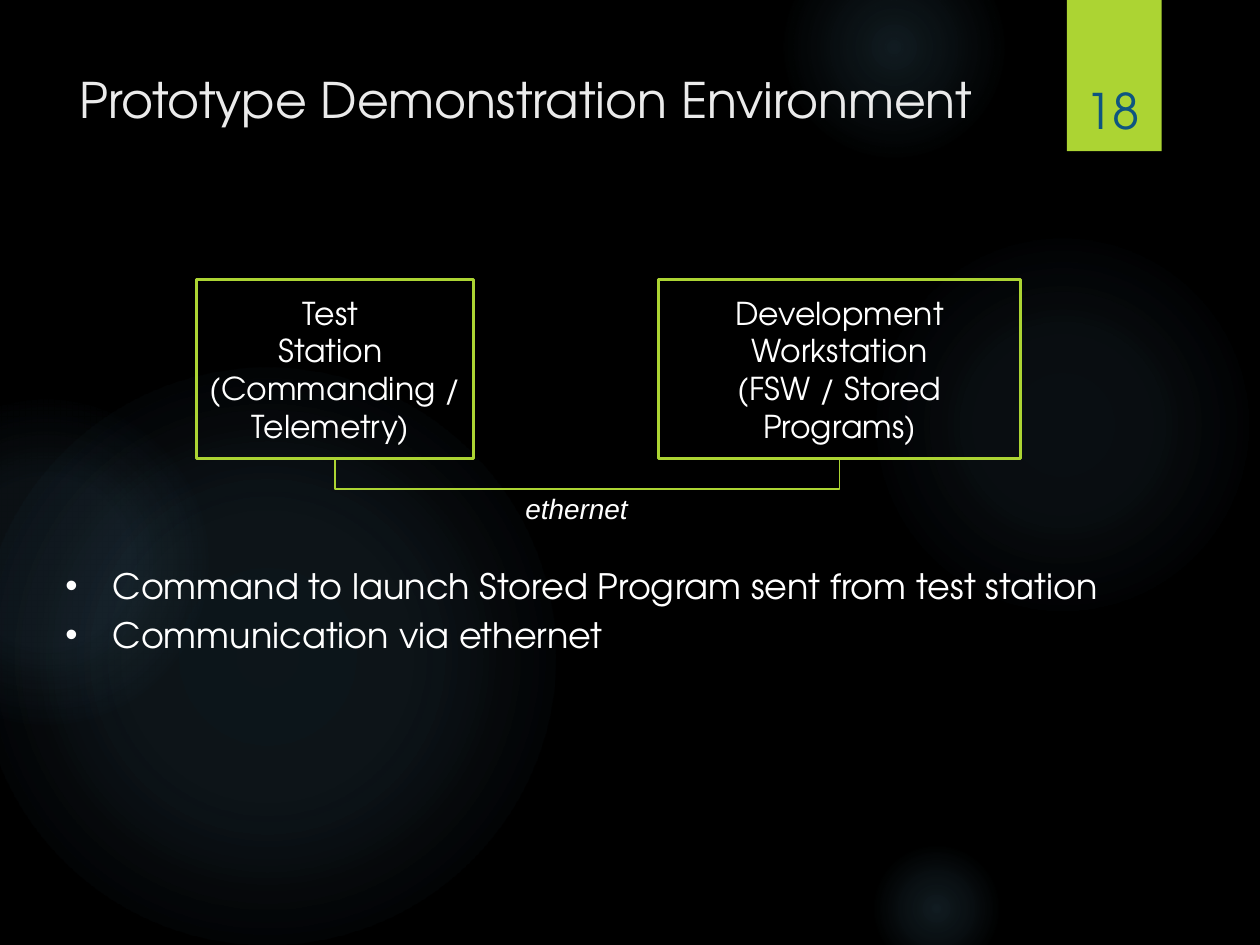
import pptx
import pptx.dml.color
import pptx.enum.shapes
import pptx.enum.text
import pptx.oxml
import pptx.oxml.ns
import pptx.util
from lxml import etree

Cm = pptx.util.Cm
Pt = pptx.util.Pt
SHAPE = pptx.enum.shapes.MSO_SHAPE
ALIGN = pptx.enum.text.PP_ALIGN
ANCHOR = pptx.enum.text.MSO_ANCHOR
qn = pptx.oxml.ns.qn
NAMESPACE = pptx.oxml.ns.nsdecls("a")


def color(hex_string):
    return pptx.dml.color.RGBColor.from_string(hex_string)


def write_text(frame, text, size=18, font="TeX Gyre Adventor", fill="FFFFFF",
               italic=False, align=ALIGN.LEFT, anchor=ANCHOR.TOP, bullet=None):
    """Write one paragraph for each line of text."""
    frame.word_wrap = True
    frame.vertical_anchor = anchor
    for index, line in enumerate(text.split("\n")):
        paragraph = frame.add_paragraph() if index else frame.paragraphs[0]
        paragraph.alignment = align
        run = paragraph.add_run()
        run.text = line
        run.font.size = Pt(size)
        run.font.name = font
        run.font.italic = italic
        run.font.color.rgb = color(fill)
        if bullet:
            paragraph.space_before = Pt(size * 0.2)
            properties = paragraph._p.get_or_add_pPr()
            indent = Cm(0.95)
            properties.set("marL", str(indent))
            properties.set("indent", str(-indent))
            etree.SubElement(properties, qn("a:buFont"), typeface="Arial")
            etree.SubElement(properties, qn("a:buChar"), char=bullet)


class SlideBuilder:
    accent = "ACD433"
    glow_color = "7AC4F0"

    def __init__(self, slide):
        self.slide = slide
        slide.background.fill.solid()
        slide.background.fill.fore_color.rgb = color("000000")

    def shape(self, kind, left, top, width, height):
        shape = self.slide.shapes.add_shape(kind, Cm(left), Cm(top), Cm(width), Cm(height))
        shape.shadow.inherit = False
        shape.fill.background()
        shape.line.fill.background()
        return shape

    def glow(self, left, top, diameter, stops):
        """Circle that fades outwards; stops are (position %, opacity %)."""
        circle = self.shape(SHAPE.OVAL, left, top, diameter, diameter)
        stop_xml = "".join(
            f'<a:gs pos="{position * 1000}"><a:srgbClr val="{self.glow_color}">'
            f'<a:alpha val="{opacity * 1000}"/></a:srgbClr></a:gs>'
            for position, opacity in stops)
        gradient = pptx.oxml.parse_xml(
            f'<a:gradFill {NAMESPACE} rotWithShape="1"><a:gsLst>{stop_xml}</a:gsLst>'
            '<a:path path="circle"><a:fillToRect l="50000" t="50000" r="50000" b="50000"/>'
            '</a:path></a:gradFill>')
        properties = circle.element.spPr
        properties.replace(properties.find(qn("a:noFill")), gradient)

    def tab(self, left, top, width, height):
        """Filled rectangle with a soft shadow below."""
        tab = self.shape(SHAPE.RECTANGLE, left, top, width, height)
        tab.fill.solid()
        tab.fill.fore_color.rgb = color(self.accent)
        shadow = pptx.oxml.parse_xml(
            f'<a:outerShdw {NAMESPACE} blurRad="{Pt(3)}" dist="{Pt(2)}" dir="5400000" '
            'rotWithShape="0"><a:srgbClr val="000000"><a:alpha val="45000"/></a:srgbClr>'
            '</a:outerShdw>')
        tab.element.spPr.find(qn("a:effectLst")).append(shadow)

    def box(self, text, left, top, width, height):
        box = self.shape(SHAPE.RECTANGLE, left, top, width, height)
        box.line.color.rgb = color(self.accent)
        box.line.width = Pt(1.5)
        write_text(box.text_frame, text, align=ALIGN.CENTER, anchor=ANCHOR.MIDDLE)
        return box

    def text(self, text, left, top, width, height, **text_format):
        box = self.slide.shapes.add_textbox(Cm(left), Cm(top), Cm(width), Cm(height))
        write_text(box.text_frame, text, **text_format)

    def link_below(self, first, second, drop):
        """Elbow connector from bottom to bottom, turned a quarter to run below."""
        connector = self.slide.shapes.add_connector(
            pptx.enum.shapes.MSO_CONNECTOR.ELBOW, 0, 0, 0, 0)
        connector.begin_connect(first, 2)
        connector.end_connect(second, 2)
        start = first.left + first.width // 2
        end = second.left + second.width // 2
        bottom = first.top + first.height
        span, thickness = end - start, Cm(0.03)
        connector.width, connector.height = thickness, span
        connector.left = (start + end - thickness) // 2
        connector.top = bottom - (span - thickness) // 2
        connector.line.color.rgb = color(self.accent)
        connector.line.width = Pt(0.75)
        properties = connector._element.spPr
        transform = properties.find(qn("a:xfrm"))
        transform.set("rot", "16200000")
        transform.set("flipH", "1")
        adjustment = round(Cm(drop) / thickness * 100000)
        etree.SubElement(properties.find(qn("a:prstGeom")).find(qn("a:avLst")),
                         qn("a:gd"), name="adj1", fmla=f"val {adjustment}")
        etree.SubElement(properties, qn("a:effectLst"))


def main():
    presentation = pptx.Presentation()
    presentation.slide_width, presentation.slide_height = Cm(25.4), Cm(19.05)
    builder = SlideBuilder(presentation.slides.add_slide(presentation.slide_layouts[6]))

    # Background glows and page tab
    for left, top, diameter, stops in (
            (17.5, 4.65, 7.82, ((0, 7), (36, 6), (69, 0))),
            (15.8, -1.27, 4.45, ((0, 14), (36, 7), (73, 0))),
            (17.5, 16.94, 2.74, ((0, 14), (36, 7), (66, 0))),
            (-0.43, 7.42, 11.63, ((0, 11), (36, 10), (75, 0))),
            (-2.34, 8.05, 6.55, ((0, 8), (36, 8), (72, 0)))):
        builder.glow(left, top, diameter, stops)
    builder.tab(21.51, 0, 1.91, 3.05)

    # Title and page number
    builder.text("Prototype Demonstration Environment", 1.35, 1.27, 19.61, 3.89,
                 size=28, fill="EBEBEB")
    builder.text("18", 21.56, 0.81, 1.75, 2.13, size=28, fill="0E5580",
                 align=ALIGN.CENTER, anchor=ANCHOR.BOTTOM)

    # Two machines joined by ethernet
    box_top, box_height = 5.64, 3.61
    station = builder.box("Test \nStation \n(Commanding /\nTelemetry) ",
                          3.96, box_top, 5.59, box_height)
    workstation = builder.box("Development\nWorkstation\n(FSW / Stored Programs)",
                              13.28, box_top, 7.29, box_height)
    builder.link_below(station, workstation, drop=0.61)
    builder.text("ethernet", 10.34, 9.78, 3.71, 0.94, size=16, font="Arial", italic=True)

    # Notes on the set-up
    builder.text("Command to launch Stored Program sent from test station\n"
                 "Communication via ethernet", 1.07, 11.25, 23.65, 7.21,
                 size=20, bullet="•")

    presentation.save("out.pptx")


if __name__ == "__main__":
    main()
